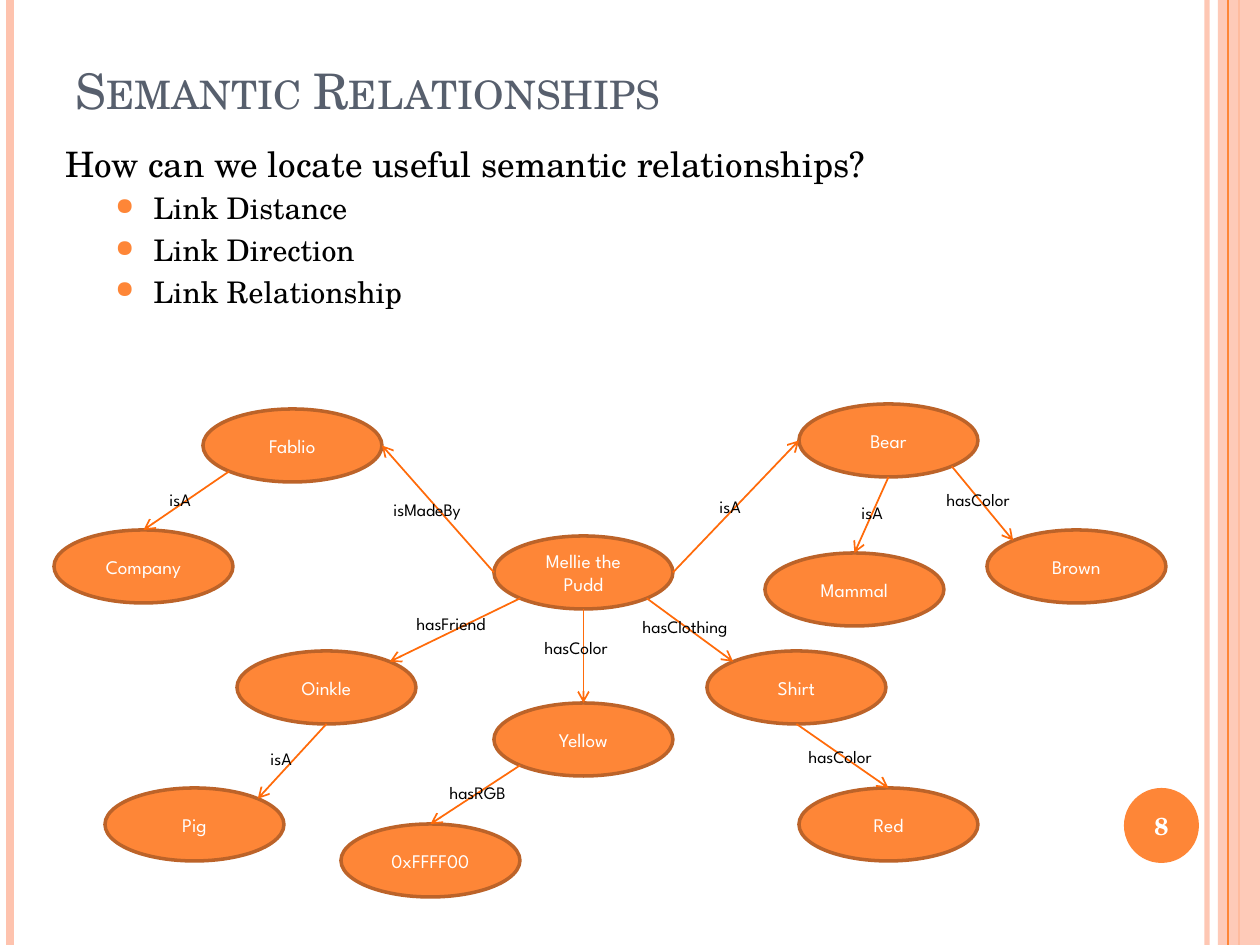
from dataclasses import dataclass
from math import cos, radians, sin

from lxml.etree import SubElement
from pptx import Presentation
from pptx.dml.color import RGBColor
from pptx.enum.shapes import MSO_CONNECTOR, MSO_SHAPE
from pptx.enum.text import MSO_ANCHOR, PP_ALIGN
from pptx.oxml.ns import qn
from pptx.util import Emu, Pt

PX_PER_INCH = 126
WIDTH, HEIGHT = 1260, 945
NODE_WIDTH, NODE_HEIGHT = 179, 73
TOP, LEFT, BOTTOM_LEFT, BOTTOM, BOTTOM_RIGHT, RIGHT, TOP_RIGHT, TOP_LEFT = 0, 2, 3, 4, 5, 6, 7, 1


@dataclass(frozen=True)
class Theme:
    """Colours, fonts and type sizes of the slide."""
    orange: str = "FE8637"
    outline: str = "BC6329"
    arrow: str = "FF6B0A"
    pale: str = "FEC3AE"
    heading: str = "575F6D"
    white: str = "FFFFFF"
    black: str = "000000"
    serif: str = "TeX Gyre Schola"
    sans: str = "League Spartan"
    title_size: int = 28
    question_size: int = 20
    bullet_size: int = 17
    number_size: int = 14
    node_size: int = 11
    label_size: int = 10


THEME = Theme()

NODES = {
    "Mellie the Pudd": (440, 132),
    "Bear": (745, 0),
    "Yellow": (440, 299),
    "Fablio": (149, 5),
    "Oinkle": (183, 247),
    "Shirt": (653, 247),
    "Red": (745, 384),
    "Pig": (51, 384),
    "Brown": (933, 126),
    "Mammal": (711, 149),
    "Company": (0, 126),
    "0xFFFF00": (287, 420),
}

RELATIONS = [
    ("Mellie the Pudd", LEFT, "Fablio", RIGHT, "isMadeBy", (327, 89)),
    ("Mellie the Pudd", BOTTOM_LEFT, "Oinkle", TOP_RIGHT, "hasFriend", (350, 203)),
    ("Mellie the Pudd", BOTTOM, "Yellow", TOP, "hasColor", (478, 227)),
    ("Mellie the Pudd", BOTTOM_RIGHT, "Shirt", TOP_LEFT, "hasClothing", (576, 206)),
    ("Mellie the Pudd", RIGHT, "Bear", LEFT, "isA", (653, 86)),
    ("Oinkle", BOTTOM, "Pig", TOP_RIGHT, "isA", (204, 338)),
    ("Shirt", BOTTOM, "Red", TOP, "hasColor", (742, 336)),
    ("Bear", BOTTOM, "Mammal", TOP, "isA", (795, 92)),
    ("Bear", BOTTOM_RIGHT, "Brown", TOP_LEFT, "hasColor", (880, 79)),
    ("Fablio", BOTTOM_LEFT, "Company", TOP, "isA", (103, 79)),
    ("Yellow", BOTTOM_LEFT, "0xFFFF00", TOP, "hasRGB", (383, 372)),
]


def px(length):
    """Turn pixels into EMU."""
    return Emu(round(length * 914400 / PX_PER_INCH))


def set_alpha(element, percent):
    """Make the solid colours inside an element partly transparent."""
    for color in element.iter(qn("a:srgbClr")):
        SubElement(color, qn("a:alpha"), val=str(percent * 1000))


def write(paragraph, text, font, size, color, bold=False, small_caps=False,
          align=PP_ALIGN.LEFT, space_before=0):
    """Add one formatted run to a paragraph."""
    paragraph.alignment = align
    paragraph.space_before = Pt(space_before)
    run = paragraph.add_run()
    run.text = text
    run.font.name, run.font.size, run.font.bold = font, Pt(size), bold
    run.font.color.rgb = RGBColor.from_string(color)
    if small_caps:
        run.font._element.set("cap", "small")


def add_text_frame(slide, box, anchor=MSO_ANCHOR.TOP):
    """Add a wrapping text box and return its frame."""
    frame = slide.shapes.add_textbox(*map(px, box)).text_frame
    frame.word_wrap = True
    frame.vertical_anchor = anchor
    return frame


def add_filled_shape(slide, kind, box, fill, line=None):
    """Add a flat preset shape with an optional outline."""
    shape = slide.shapes.add_shape(kind, *map(px, box))
    shape.shadow.inherit = False
    shape.fill.solid()
    shape.fill.fore_color.rgb = RGBColor.from_string(fill)
    if line:
        shape.line.color.rgb = RGBColor.from_string(line)
        shape.line.width = Pt(2)
    else:
        shape.line.fill.background()
    return shape


def add_line(slide, start, end, color, width):
    """Add a straight connector without a shadow."""
    connector = slide.shapes.add_connector(MSO_CONNECTOR.STRAIGHT, *map(px, (*start, *end)))
    connector.line.color.rgb = RGBColor.from_string(color)
    connector.line.width = Pt(width)
    SubElement(connector._element.spPr, qn("a:effectLst"))
    return connector


def add_frame(slide, box):
    """Draw the vertical stripes at both edges of the slide."""
    left, top, width, height = box

    def rail(x, color, weight):
        return add_line(slide, (left + x, top), (left + x, top + height), color, weight)

    set_alpha(rail(1207, THEME.pale, 3)._element, 93)
    rail(10, THEME.pale, 4.5)
    rail(1239, THEME.orange, 1.5)
    band = add_filled_shape(slide, MSO_SHAPE.RECTANGLE,
                            (left + 1218, top, width - 1218, height), THEME.pale)
    set_alpha(band._element.spPr, 87)
    rail(1228, THEME.orange, 0.75)


def add_page_number(slide, box, number):
    """Draw the page number in its disc."""
    shape = add_filled_shape(slide, MSO_SHAPE.OVAL, box, THEME.orange)
    frame = shape.text_frame
    frame.vertical_anchor = MSO_ANCHOR.MIDDLE
    write(frame.paragraphs[0], number, THEME.serif, THEME.number_size, THEME.white,
          bold=True, align=PP_ALIGN.CENTER)


def add_title(slide, box, text):
    """Write the slide title."""
    frame = add_text_frame(slide, box, MSO_ANCHOR.BOTTOM)
    write(frame.paragraphs[0], text, THEME.serif, THEME.title_size, THEME.heading, small_caps=True)


def add_body(slide, box, question, answers):
    """Write the question and its bulleted answers."""
    frame = add_text_frame(slide, box)
    write(frame.paragraphs[0], question, THEME.serif, THEME.question_size, THEME.black,
          space_before=6)
    for answer in answers:
        paragraph = frame.add_paragraph()
        write(paragraph, answer, THEME.serif, THEME.bullet_size, THEME.black, space_before=3.4)
        properties = paragraph._p.get_or_add_pPr()
        properties.set("marL", str(px(88)))
        properties.set("indent", str(-px(38)))
        color = SubElement(properties, qn("a:buClr"))
        SubElement(color, qn("a:srgbClr"), val=THEME.orange)
        SubElement(properties, qn("a:buSzPct"), val="80000")
        SubElement(properties, qn("a:buChar"), char="●")


def site_point(position, site):
    """Find a connection site, counted anticlockwise from the top of a node."""
    angle = radians(90 + 45 * site)
    return (position[0] + NODE_WIDTH / 2 * (1 + cos(angle)),
            position[1] + NODE_HEIGHT / 2 * (1 - sin(angle)))


def join(slide, source, source_site, target, target_site, positions, shapes):
    """Draw an arrow glued to the given sites of two nodes."""
    start = site_point(positions[source], source_site)
    end = site_point(positions[target], target_site)
    connector = add_line(slide, start, end, THEME.arrow, 1)
    connector.begin_connect(shapes[source], 0)
    connector.end_connect(shapes[target], 0)
    links = connector._element.nvCxnSpPr.cNvCxnSpPr
    links.stCxn.idx, links.endCxn.idx = source_site, target_site
    connector.begin_x, connector.begin_y = map(px, start)
    connector.end_x, connector.end_y = map(px, end)
    SubElement(connector.line._get_or_add_ln(), qn("a:tailEnd"), type="arrow")


def add_graph(slide, box):
    """Draw the nodes, arrows and relation labels."""
    left, top = box[:2]
    positions = {name: (left + x, top + y) for name, (x, y) in NODES.items()}
    shapes = {}
    for name, position in positions.items():
        shape = add_filled_shape(slide, MSO_SHAPE.OVAL, (*position, NODE_WIDTH, NODE_HEIGHT),
                                 THEME.orange, THEME.outline)
        shape.text_frame.vertical_anchor = MSO_ANCHOR.MIDDLE
        write(shape.text_frame.paragraphs[0], name, THEME.sans, THEME.node_size, THEME.white,
              align=PP_ALIGN.CENTER)
        shapes[name] = shape
    for source, source_site, target, target_site, label, (x, y) in RELATIONS:
        join(slide, source, source_site, target, target_site, positions, shapes)
        frame = add_text_frame(slide, (left + x, top + y, 134, 34))
        write(frame.paragraphs[0], label, THEME.sans, THEME.label_size, THEME.black)


def main():
    """Build and save the slide."""
    presentation = Presentation()
    presentation.slide_width, presentation.slide_height = px(WIDTH), px(HEIGHT)
    slide = presentation.slides.add_slide(presentation.slide_layouts[6])
    add_frame(slide, (0, 0, WIDTH, HEIGHT))
    add_page_number(slide, (1124, 788, 75, 75), "8")
    add_title(slide, (63, 38, 1029, 88), "Semantic Relationships")
    add_body(slide, (53, 136, 1071, 357), "How can we locate useful semantic relationships?",
             ["Link Distance", "Link Direction", "Link Relationship"])
    add_graph(slide, (54, 404, 1112, 493))
    presentation.save("out.pptx")


if __name__ == "__main__":
    main()
